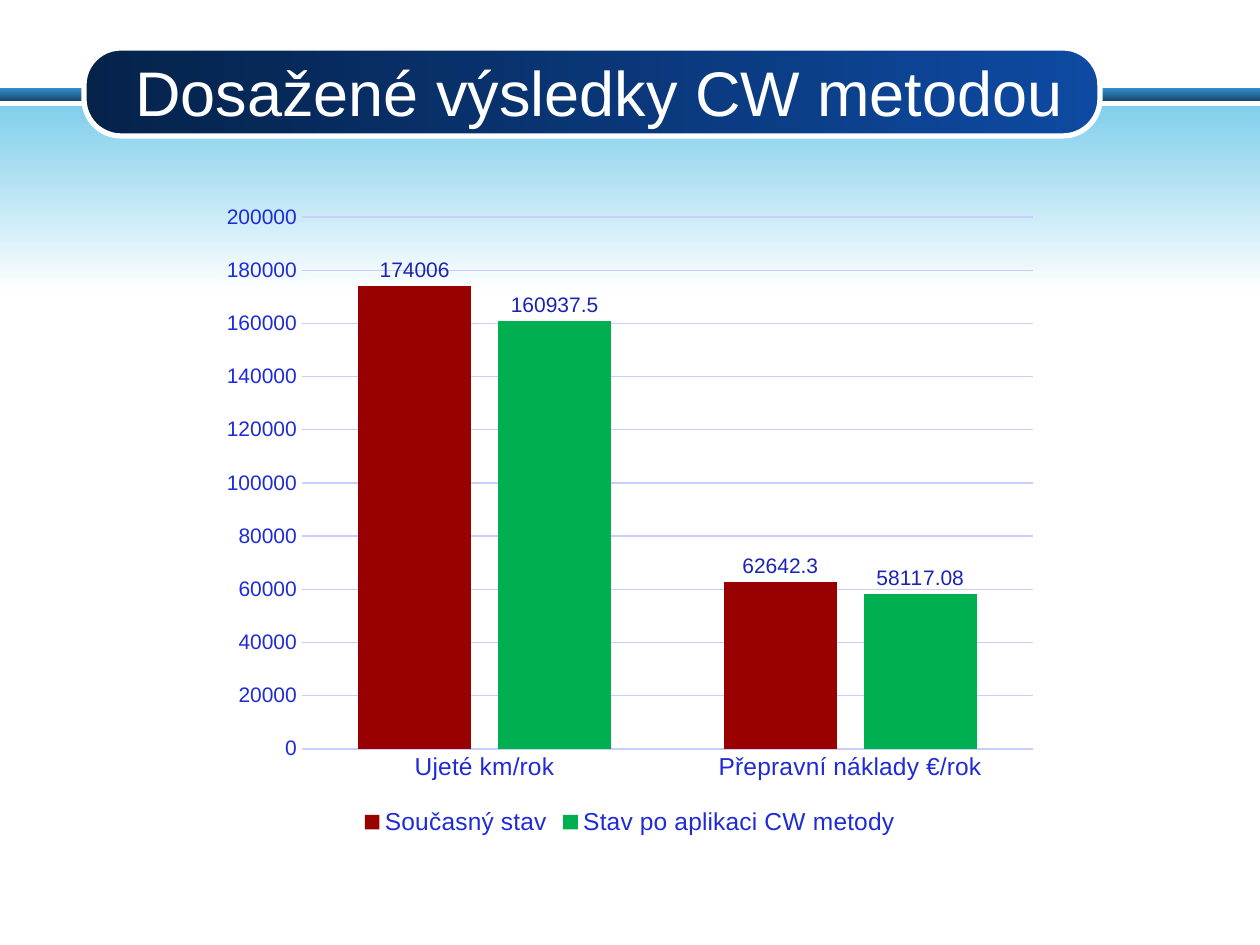
from pptx import Presentation, util as u
from pptx.chart.data import CategoryChartData
from pptx.dml.color import RGBColor
from pptx.enum import chart as charts, shapes, text

PX = 914400 / 126  # EMU per pixel
FONT = "Arial"
WHITE = RGBColor(0xFF, 0xFF, 0xFF)
STRIPE_TOP, STRIPE_BOTTOM = RGBColor(0x31, 0x91, 0xD3), RGBColor(0x1A, 0x48, 0x6C)
SKY = RGBColor(0x81, 0xCF, 0xEB)
PILL_LEFT, PILL_RIGHT = RGBColor(0x05, 0x22, 0x4A), RGBColor(0x0E, 0x4A, 0xA2)
CHART_TEXT = RGBColor(0x0D, 0x12, 0x59)
AXIS_TEXT = RGBColor(0x1F, 0x2B, 0xD6)
LABEL_TEXT = RGBColor(0x1A, 0x24, 0xB2)
GRID = RGBColor(0xCA, 0xCD, 0xF7)
RED, GREEN = RGBColor(0x99, 0x00, 0x00), RGBColor(0x00, 0xB0, 0x50)

CATEGORIES = ["Ujeté km/rok", "Přepravní náklady €/rok"]
SERIES = [
    ("Současný stav", [174006, 62642.3], RED),
    ("Stav po aplikaci CW metody", [160937.5, 58117.08], GREEN),
]


def px(*lengths):
    return [u.Emu(round(length * PX)) for length in lengths]


def set_font(font, size, color):
    font.name = FONT
    font.size = u.Pt(size)
    font.color.rgb = color


def add_gradient_shape(slide, kind, box, start, end, angle):
    shape = slide.shapes.add_shape(kind, *px(*box))
    shape.shadow.inherit = False
    shape.line.fill.background()
    shape.fill.gradient()
    shape.fill.gradient_angle = angle
    for stop, color in zip(shape.fill.gradient_stops, (start, end)):
        stop.color.rgb = color
    return shape


def add_backdrop(slide, left, top, width, height):
    """Dark stripe, white gap and a sky band fading to white."""
    stripe, gap = 13, 5
    rectangle = shapes.MSO_SHAPE.RECTANGLE
    add_gradient_shape(slide, rectangle, (left, top, width, stripe),
                       STRIPE_TOP, STRIPE_BOTTOM, 270)
    offset = stripe + gap
    add_gradient_shape(slide, rectangle, (left, top + offset, width, height - offset),
                       SKY, WHITE, 270)


def add_title(slide, left, top, width, height):
    """Rounded pill with the title text over it."""
    pill = add_gradient_shape(slide, shapes.MSO_SHAPE.ROUNDED_RECTANGLE,
                              (left, top, width, height), PILL_LEFT, PILL_RIGHT, 0)
    pill.adjustments[0] = 0.42
    pill.line.color.rgb = WHITE
    pill.line.width = u.Pt(3)

    title = slide.shapes.add_textbox(*px(left + 32, top + 4, width - 50, height - 10))
    frame = title.text_frame
    frame.word_wrap = True
    frame.vertical_anchor = text.MSO_ANCHOR.MIDDLE
    paragraph = frame.paragraphs[0]
    paragraph.text = "Dosažené výsledky CW metodou"
    paragraph.alignment = text.PP_ALIGN.CENTER
    set_font(paragraph.font, 36, WHITE)


def add_results_chart(slide, left, top, width, height):
    """Clustered columns before and after the method."""
    data = CategoryChartData()
    data.categories = CATEGORIES
    for name, values, _ in SERIES:
        data.add_series(name, values)
    chart = slide.shapes.add_chart(charts.XL_CHART_TYPE.COLUMN_CLUSTERED,
                                   *px(left, top, width, height), data).chart
    set_font(chart.font, 10, CHART_TEXT)
    chart.has_title = False

    # Legend
    chart.has_legend = True
    chart.legend.position = charts.XL_LEGEND_POSITION.BOTTOM
    chart.legend.include_in_layout = False
    set_font(chart.legend.font, 14, AXIS_TEXT)

    # Axes
    category_axis, value_axis = chart.category_axis, chart.value_axis
    for axis, size in ((category_axis, 14), (value_axis, 12)):
        axis.major_tick_mark = axis.minor_tick_mark = charts.XL_TICK_MARK.NONE
        set_font(axis.tick_labels.font, size, AXIS_TEXT)
    category_axis.format.line.color.rgb = GRID
    category_axis.format.line.width = u.Pt(1)
    value_axis.format.line.fill.background()
    value_axis.minimum_scale, value_axis.maximum_scale = 0, 200000
    value_axis.major_unit = 20000
    grid_line = value_axis.major_gridlines.format.line
    grid_line.color.rgb = GRID
    grid_line.width = u.Pt(0.75)

    # Columns and their labels
    plot = chart.plots[0]
    plot.gap_width, plot.overlap = 100, -24
    plot.vary_by_categories = False
    for series, (_, _, color) in zip(plot.series, SERIES):
        series.format.fill.solid()
        series.format.fill.fore_color.rgb = color
        series.invert_if_negative = False
        labels = series.data_labels
        labels.show_value = True
        labels.position = charts.XL_LABEL_POSITION.OUTSIDE_END
        set_font(labels.font, 12, LABEL_TEXT)


def main():
    presentation = Presentation()
    presentation.slide_width, presentation.slide_height = px(1260, 945)
    slide = presentation.slides.add_slide(presentation.slide_layouts[6])
    add_backdrop(slide, 0, 88, 1260, 206)
    add_title(slide, 84, 48, 1016, 88)
    add_results_chart(slide, 210, 193, 840, 648)
    presentation.save("out.pptx")


if __name__ == "__main__":
    main()
